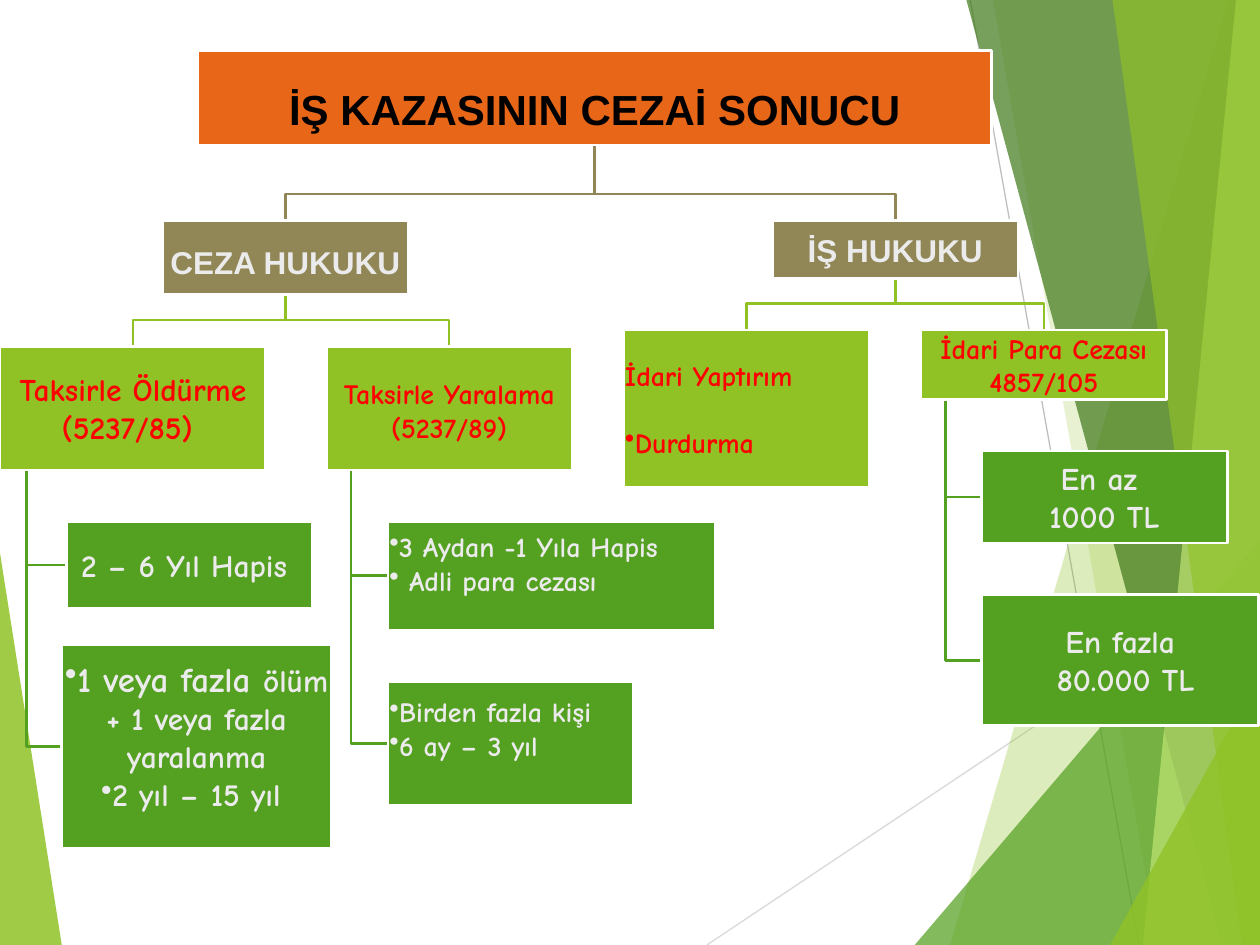
from typing import NamedTuple

from pptx import Presentation, util as u
from pptx.dml.color import RGBColor
from pptx.enum import shapes as es, text as et
from pptx.oxml.ns import qn
from lxml import etree

WHITE, PALE, RED, BLACK = "FFFFFF", "EBEBEB", "FF0000", "000000"
ORANGE, OLIVE, LIME, GREEN = "E76618", "918655", "90C226", "54A021"
COMIC, ARIAL = "Comic Neue", "Arial"
WIDE = 1.95

Point = tuple[float, float]


class Para(NamedTuple):
    text: str
    dot: bool = False
    gap: float = 0
    lead: str = ""  # larger opening words


class Box(NamedTuple):
    left: float
    top: float
    width: float
    height: float
    fill: str
    paras: list[Para]
    size: int = 18
    color: str = PALE
    font: str = COMIC
    align: str = "CENTER"
    shift: float = 0  # extra top inset; negative adds to the bottom


class Facet(NamedTuple):
    color: str
    alpha: int
    points: list[Point]


LEFT_FACET = Facet(LIME, 85, [(0, 4.39), (0.49, 7.5), (0, 7.5)])
FACETS = [
    Facet(LIME, 30, [(9.75, 0), (7.54, 7.5), (10, 7.5), (10, 0)]),
    Facet(LIME, 20, [(7.88, 0), (9.19, 7.5), (10, 7.5), (10, 0)]),
    Facet(GREEN, 72, [(7.26, 7.5), (10, 4.29), (10, 7.5)]),
    Facet("3F7819", 70, [(7.67, 0), (9.7, 7.5), (10, 7.5), (10, 0)]),
    Facet("C0E474", 70, [(9.81, 0), (9.07, 7.5), (10, 7.5), (10, 0)]),
    Facet(LIME, 65, [(8.83, 0), (9.86, 7.5), (10, 7.5), (10, 0)]),
    Facet(LIME, 80, [(8.81, 7.5), (10, 5.35), (10, 7.5)]),
]
RAYS = [((5.61, 7.5), (10, 4.57), "D9D9D9"), ((7.7, 0), (9.04, 7.5), "BFBFBF")]

BOXES = {
    "head": Box(1.57, 0.4, 6.3, 0.75, ORANGE, [Para("İŞ KAZASININ CEZAİ SONUCU")],
                24, BLACK, ARIAL, shift=0.18),
    "ceza": Box(1.29, 1.75, WIDE, 0.59, OLIVE, [Para("CEZA HUKUKU")],
                font=ARIAL, shift=0.07),
    "kill": Box(0, 2.75, 2.11, 0.98, LIME, [Para("Taksirle Öldürme (5237/85) ")],
                color=RED),
    "jail": Box(0.53, 4.14, WIDE, 0.69, GREEN, [Para("2 – 6 Yıl Hapis ")]),
    "death": Box(0.49, 5.12, 2.14, 1.61, GREEN, [
        Para("ölüm + 1 veya fazla yaralanma", True, lead="1 veya fazla "),
        Para("2 yıl – 15 yıl ", True)], shift=-0.18),
    "wound": Box(2.59, 2.75, WIDE, 0.98, LIME, [Para("Taksirle Yaralama (5237/89)")],
                 16, RED, shift=0.03),
    "month": Box(3.08, 4.14, 2.6, 0.86, GREEN, [
        Para("3 Aydan -1 Yıla Hapis", True), Para(" Adli para cezası", True)],
        16, align="LEFT", shift=-0.2),
    "many": Box(3.08, 5.41, WIDE, 0.98, GREEN, [
        Para("Birden fazla kişi", True), Para("6 ay – 3 yıl", True)],
        16, align="LEFT", shift=-0.24),
    "work": Box(6.13, 1.75, WIDE, 0.46, OLIVE, [Para("İŞ HUKUKU")], font=ARIAL),
    "stop": Box(4.95, 2.62, WIDE, 1.25, LIME, [
        Para("İdari Yaptırım"), Para("Durdurma", True, gap=19)],
        16, RED, align="LEFT"),
    "fine": Box(7.31, 2.62, WIDE, 0.55, LIME, [
        Para("İdari Para Cezası"), Para("4857/105")], 16, RED),
    "least": Box(7.79, 3.58, WIDE, 0.73, GREEN, [Para("En az "), Para("1000 TL")]),
    "most": Box(7.79, 4.72, 2.2, 1.04, GREEN, [Para("En fazla"), Para(" 80.000 TL")]),
}
TREES = [("head", ["ceza", "work"], OLIVE), ("ceza", ["kill", "wound"], LIME),
         ("work", ["stop", "fine"], LIME)]
LISTS = [("kill", ["jail", "death"]), ("wound", ["month", "many"]),
         ("fine", ["least", "most"])]


def rgb(code: str) -> RGBColor:
    return RGBColor.from_string(code)


def write(par, text: str, *, size: float, color: str, font: str) -> None:
    run = par.add_run()
    run.text = text
    run.font.size, run.font.name, run.font.bold = u.Pt(size), font, True
    run.font.color.rgb = rgb(color)


def bullet(par) -> None:
    """Put a dot in the font of the text before a paragraph."""
    props = par._p.get_or_add_pPr()
    props.set("marL", "0")
    props.set("indent", "0")
    etree.SubElement(props, qn("a:buFontTx"))
    etree.SubElement(props, qn("a:buChar")).set("char", "•")


def style(shape, box: Box) -> None:
    """Place, paint and fill a box or placeholder with its text."""
    shape.left, shape.top, shape.width, shape.height = map(u.Inches, box[:4])
    shape.shadow.inherit = False
    shape.fill.solid()
    shape.fill.fore_color.rgb = rgb(box.fill)
    shape.line.color.rgb = rgb(WHITE)
    shape.line.width = u.Pt(1.5)
    frame = shape.text_frame
    frame.auto_size = et.MSO_AUTO_SIZE.NONE
    frame.word_wrap = True
    frame.vertical_anchor = et.MSO_ANCHOR.MIDDLE
    frame.margin_left = frame.margin_right = u.Inches(0.01)
    frame.margin_top = u.Inches(0.01 + max(box.shift, 0))
    frame.margin_bottom = u.Inches(0.01 + max(-box.shift, 0))
    for i, item in enumerate(box.paras):
        par = frame.add_paragraph() if i else frame.paragraphs[0]
        par.alignment = et.PP_ALIGN[box.align]
        par.space_before = u.Pt(item.gap)
        if item.dot:
            bullet(par)
        look = dict(color=box.color, font=box.font)
        if item.lead:
            write(par, item.lead, size=box.size + 2, **look)
        write(par, item.text, size=box.size, **look)


def trace(slide, points: list[Point], close: bool):
    """Build a freeform through the points."""
    first, *rest = [(u.Inches(x), u.Inches(y)) for x, y in points]
    pen = slide.shapes.build_freeform(*first)
    pen.add_line_segments(rest, close=close)
    shape = pen.convert_to_shape()
    shape.shadow.inherit = False
    return shape


def paint(slide, facet: Facet) -> None:
    """Draw one translucent polygon of the backdrop."""
    shape = trace(slide, facet.points, close=True)
    shape.fill.solid()
    shape.fill.fore_color.rgb = rgb(facet.color)
    shape.line.fill.background()
    tint = shape.element.spPr.find(".//" + qn("a:srgbClr"))
    etree.SubElement(tint, qn("a:alpha")).set("val", str(facet.alpha * 1000))


def ray(slide, start: Point, end: Point, color: str) -> None:
    """Draw a thin straight line of the backdrop."""
    line = slide.shapes.add_connector(
        es.MSO_CONNECTOR.STRAIGHT, *map(u.Inches, start + end))
    line.line.color.rgb = rgb(color)
    line.line.width = u.Pt(0.75)
    etree.SubElement(line.element.spPr, qn("a:effectLst"))


def bend(slide, points: list[Point], color: str) -> None:
    """Draw an open line with square corners."""
    shape = trace(slide, points, close=False)
    shape.fill.background()
    shape.line.color.rgb = rgb(color)
    shape.line.width = u.Pt(1.5)


def branch(slide, top: Box, kid: Box, color: str) -> None:
    """Lead from the bottom of one box to the top of another."""
    x, end = top.left + top.width / 2, kid.left + kid.width / 2
    bar = kid.top - 0.21
    bend(slide, [(x, top.top + top.height), (x, bar), (end, bar), (end, kid.top)],
         color)


def hang(slide, top: Box, kid: Box, color: str) -> None:
    """Lead down near the left edge of one box to the side of another."""
    x, y = top.left + top.width / 10, kid.top + kid.height / 2
    bend(slide, [(x, top.top + top.height), (x, y), (kid.left, y)], color)


def main() -> None:
    deck = Presentation()
    deck.slide_width, deck.slide_height = u.Inches(10), u.Inches(7.5)
    slide = deck.slides.add_slide(deck.slide_layouts[5])
    paint(slide, LEFT_FACET)
    for start, end, color in RAYS:
        ray(slide, start, end, color)
    for facet in FACETS:
        paint(slide, facet)

    for top, kids in LISTS:
        for kid in kids:
            hang(slide, BOXES[top], BOXES[kid], GREEN)
    for top, kids, color in TREES:
        for kid in kids:
            branch(slide, BOXES[top], BOXES[kid], color)

    title = slide.shapes.title
    title.element.getparent().append(title.element)  # in front of the lines
    for name, box in BOXES.items():
        shape = title if name == "head" else slide.shapes.add_shape(
            es.MSO_SHAPE.RECTANGLE, *map(u.Inches, box[:4]))
        style(shape, box)
    deck.save("out.pptx")


if __name__ == "__main__":
    main()
